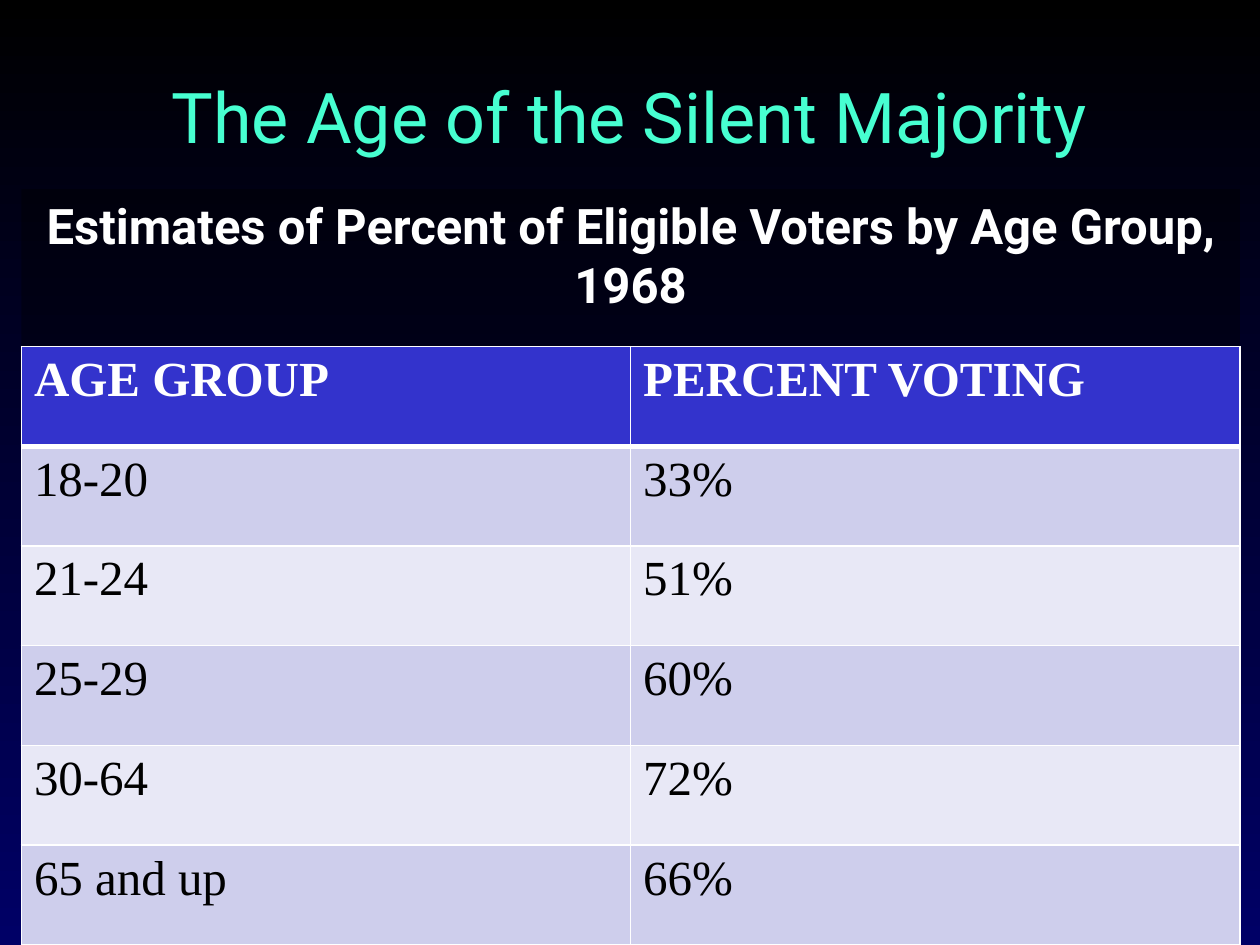
from lxml.etree import SubElement
from pptx import Presentation
from pptx.dml.color import RGBColor
from pptx.enum.shapes import MSO_SHAPE
from pptx.enum.text import MSO_ANCHOR, PP_ALIGN
from pptx.oxml import parse_xml
from pptx.oxml.ns import nsdecls, qn
from pptx.util import Inches, Pt

HUES = {
    "black": "000000", "navy": "000066", "mint": "47FFD1", "white": "FFFFFF",
    "head": "3333CC", "odd": "CECEEC", "even": "E8E8F6",
}
ROWS = [
    ("AGE GROUP", "PERCENT VOTING"),
    ("18-20", "33%"),
    ("21-24", "51%"),
    ("25-29", "60%"),
    ("30-64", "72%"),
    ("65 and up", "66%"),
]


def style(para, face, size, hue, bold=False):
    font = para.runs[0].font
    font.name, font.size, font.bold = face, Pt(size), bold
    font.color.rgb = RGBColor.from_string(HUES[hue])


def border(cell, side, width):
    cell._tc.get_or_add_tcPr().append(parse_xml(
        f'<a:{side} {nsdecls("a")} w="{Pt(width)}"><a:solidFill>'
        f'<a:srgbClr val="{HUES["white"]}"/></a:solidFill></a:{side}>'))


deck = Presentation()
deck.slide_width, deck.slide_height = Inches(10), Inches(7.5)
slide = deck.slides.add_slide(deck.slide_layouts[6])

# Background, dark at the top
back = slide.background.fill
back.gradient()
back.gradient_angle = 270
for stop, hue, pos in zip(back.gradient_stops, ("black", "navy"), (0, 1)):
    stop.color.rgb = RGBColor.from_string(HUES[hue])
    stop.position = pos

# Title
title = slide.shapes.add_textbox(Inches(0.33), Inches(0.5), Inches(9.33), Inches(0.83))
frame = title.text_frame
frame.word_wrap = True
frame.vertical_anchor = MSO_ANCHOR.MIDDLE
frame.text = "The Age of the Silent Majority"
frame.paragraphs[0].alignment = PP_ALIGN.CENTER
style(frame.paragraphs[0], "Roboto", 40, "mint")

# Caption on a see-through band
band = slide.shapes.add_shape(
    MSO_SHAPE.RECTANGLE, Inches(0.17), Inches(1.5), Inches(9.67), Inches(1.25))
band.shadow.inherit = False
band.line.fill.background()
band.fill.solid()
band.fill.fore_color.rgb = RGBColor.from_string(HUES["black"])
tint = band._element.spPr.find(qn("a:solidFill"))[0]
SubElement(tint, qn("a:alpha"), val="37000")
frame = band.text_frame
frame.word_wrap = True
frame.vertical_anchor = MSO_ANCHOR.TOP
frame.text = "Estimates of Percent of Eligible Voters by Age Group, 1968"
frame.paragraphs[0].alignment = PP_ALIGN.CENTER
style(frame.paragraphs[0], "Roboto", 28, "white", True)

# Table of turnout by age
table = slide.shapes.add_table(
    len(ROWS), 2, Inches(0.17), Inches(2.75), Inches(9.67), Inches(4.75)).table
for r, row in enumerate(ROWS):
    fill = "head" if r == 0 else "odd" if r % 2 else "even"
    for c, text in enumerate(row):
        cell = table.cell(r, c)
        cell.text = text
        style(cell.text_frame.paragraphs[0], "Times New Roman", 28,
              "black" if r else "white", r == 0)
        # A thick rule parts the header from the rows
        for side, width in (("lnL", 1), ("lnR", 1), ("lnT", 3 if r == 1 else 1),
                            ("lnB", 1 if r else 3)):
            border(cell, side, width)
        cell.fill.solid()
        cell.fill.fore_color.rgb = RGBColor.from_string(HUES[fill])

deck.save("out.pptx")
